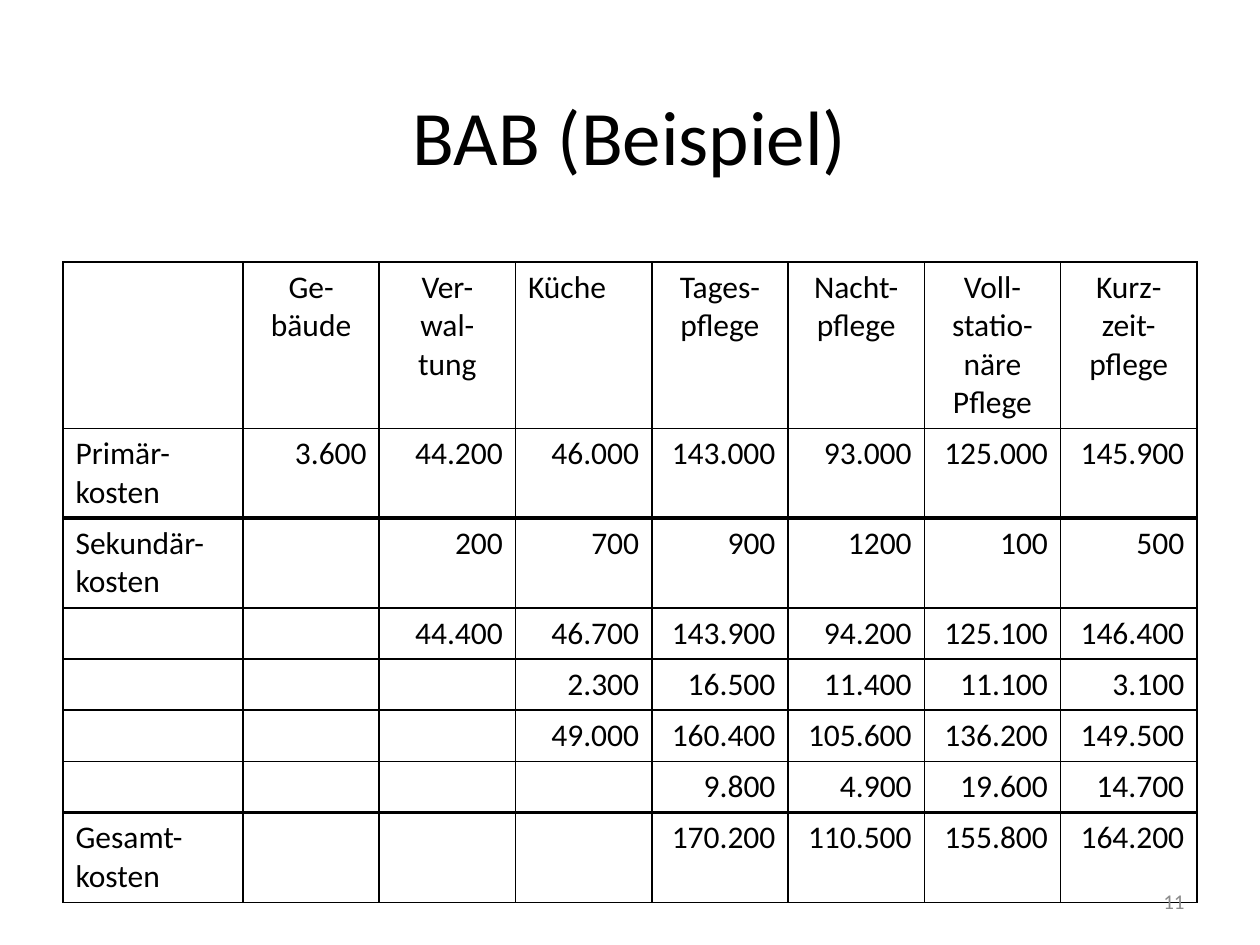
"""Build the cost allocation sheet slide with its title, table and page number."""
from dataclasses import dataclass

from lxml.etree import SubElement
from pptx import Presentation
from pptx.dml.color import RGBColor
from pptx.enum.text import MSO_ANCHOR, PP_ALIGN
from pptx.oxml.ns import qn
from pptx.util import Emu, Pt


@dataclass(frozen=True)
class Theme:
    font: str = "Calibri"
    ink: str = "000000"
    paper: str = "FFFFFF"
    muted: str = "8C8C8C"
    title: int = 44
    body: int = 18
    small: int = 12
    thin: float = 1
    thick: float = 2.25


theme = Theme()
PX = 914400 / 126


def px(length):
    return Emu(round(length * PX))


def write(frame, text, size=theme.body, color=theme.ink, align=PP_ALIGN.LEFT):
    for index, line in enumerate(text.split("\n")):
        para = frame.paragraphs[0] if index == 0 else frame.add_paragraph()
        para.alignment = align
        span = para.add_run()
        span.text = line
        span.font.name = theme.font
        span.font.size = Pt(size)
        span.font.color.rgb = RGBColor.from_string(color)


deck = Presentation()
deck.slide_width, deck.slide_height = px(1260), px(945)
page = deck.slides.add_slide(deck.slide_layouts[6])

rows = [
    ["", "Ge-\nbäude", "Ver-\nwal-\ntung", "Küche", "Tages-\npflege", "Nacht-\npflege",
     "Voll-\nstatio-\nnäre\nPflege", "Kurz-\nzeit-\npflege"],
    ["Primär-\nkosten", "3.600", "44.200", "46.000", "143.000", "93.000", "125.000", "145.900"],
    ["Sekundär-kosten", "", "200", "700", "900", "1200", "100", "500"],
    ["", "", "44.400", "46.700", "143.900", "94.200", "125.100", "146.400"],
    ["", "", "", "2.300", "16.500", "11.400", "11.100", "3.100"],
    ["", "", "", "49.000", "160.400", "105.600", "136.200", "149.500"],
    ["", "", "", "", "9.800", "4.900", "19.600", "14.700"],
    ["Gesamt-kosten", "", "", "", "170.200", "110.500", "155.800", "164.200"],
]
row_heights = [166, 89, 90, 51, 51, 51, 51, 90]
table_width, label_width = 1134, 180
value_width = (table_width - label_width) / (len(rows[0]) - 1)
thick_below = {1, 6}

table = page.shapes.add_table(
    len(rows), len(rows[0]), px(63), px(262), px(table_width), px(sum(row_heights))
).table
table.first_row = table.horz_banding = False
for index, column in enumerate(table.columns):
    column.width = px(value_width if index else label_width)

for row_index, values in enumerate(rows):
    table.rows[row_index].height = px(row_heights[row_index])
    for column_index, value in enumerate(values):
        cell = table.cell(row_index, column_index)
        properties = cell._tc.get_or_add_tcPr()
        borders = {
            "a:lnL": theme.thin,
            "a:lnR": theme.thin,
            "a:lnT": theme.thick if row_index - 1 in thick_below else theme.thin,
            "a:lnB": theme.thick if row_index in thick_below else theme.thin,
        }
        for tag, weight in borders.items():
            border = SubElement(properties, qn(tag), w=str(Pt(weight)))
            fill = SubElement(border, qn("a:solidFill"))
            SubElement(fill, qn("a:srgbClr"), val=theme.ink)
        cell.fill.solid()
        cell.fill.fore_color.rgb = RGBColor.from_string(theme.paper)
        if value:
            if value == "Küche" or value.startswith("Primär"):
                align = PP_ALIGN.JUSTIFY
            elif column_index == 0:
                align = PP_ALIGN.LEFT
            else:
                align = PP_ALIGN.RIGHT if row_index else PP_ALIGN.CENTER
            write(cell.text_frame, value, align=align)

labels = [
    ("BAB (Beispiel)", (63, 40, 1134, 190), theme.title, theme.ink, PP_ALIGN.CENTER),
    ("11", (903, 876, 294, 50), theme.small, theme.muted, PP_ALIGN.RIGHT),
]
for text, place, size, color, align in labels:
    box = page.shapes.add_textbox(*map(px, place))
    box.text_frame.word_wrap = True
    box.text_frame.vertical_anchor = MSO_ANCHOR.MIDDLE
    write(box.text_frame, text, size=size, color=color, align=align)

deck.save("out.pptx")
